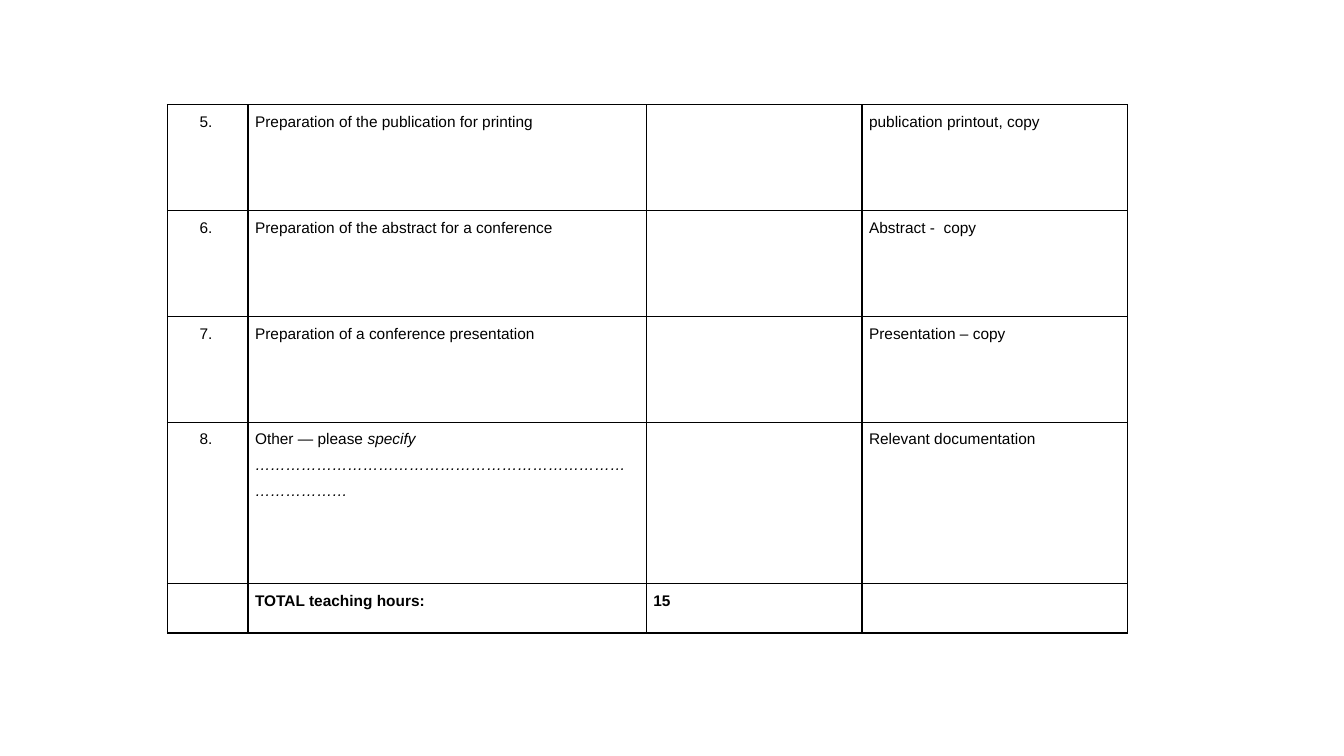
from lxml.etree import SubElement
from pptx import Presentation
from pptx.dml.color import RGBColor
from pptx.oxml.ns import qn
from pptx.util import Inches, Pt


def color(hex_code):
    return RGBColor.from_string(hex_code)


class ReportSlide:
    font = "Arial"
    size = 11
    ink = "000000"
    padding = 0.07

    def __init__(self, deck):
        self.slide = deck.slides.add_slide(deck.slide_layouts[6])

    def table(self, left, top, widths, heights, rows):
        frame = self.slide.shapes.add_table(
            len(heights), len(widths), Inches(left), Inches(top),
            Inches(sum(widths)), Inches(sum(heights)))
        grid = frame.table
        grid.first_row = grid.horz_banding = False
        for column, width in zip(grid.columns, widths):
            column.width = Inches(width)
        for row, height in zip(grid.rows, heights):
            row.height = Inches(height)
        for row, entries in zip(grid.rows, rows):
            for index, (cell, runs) in enumerate(zip(row.cells, entries)):
                self.cell(cell, runs, indent=0.25 if index == 0 else 0)

    def cell(self, cell, runs, indent):
        cell.margin_left = cell.margin_right = Inches(self.padding)
        cell.margin_top = cell.margin_bottom = 0
        self.borders(cell)
        cell.fill.background()
        paragraph = cell.text_frame.paragraphs[0]
        paragraph.font.size = Pt(self.size)
        if not runs:
            return
        paragraph.line_spacing = 1.5
        paragraph.space_before = paragraph.space_after = Pt(6)
        if indent:
            paragraph._p.get_or_add_pPr().set("marL", str(Inches(indent)))
        for text, style in runs:
            self.run(paragraph, text, style)

    def run(self, paragraph, text, style):
        run = paragraph.add_run()
        run.text = text
        run.font.name = self.font
        run.font.size = Pt(self.size)
        run.font.color.rgb = color(self.ink)
        run.font.bold = style == "bold"
        run.font.italic = style == "italic"

    def borders(self, cell):
        properties = cell._tc.get_or_add_tcPr()
        for side in ("a:lnL", "a:lnR", "a:lnT", "a:lnB"):
            line = SubElement(properties, qn(side), w=str(Pt(1)))
            fill = SubElement(line, qn("a:solidFill"))
            SubElement(fill, qn("a:srgbClr"), val=self.ink)


def plain(text):
    return [(text, "plain")]


def main():
    deck = Presentation()
    deck.slide_width, deck.slide_height = Inches(13.33), Inches(7.5)
    report = ReportSlide(deck)

    # Activities and the documents that confirm them
    other = [("Other — please ", "plain"), ("specify " + "…" * 30, "italic")]
    activities = [
        (plain("Preparation of the publication for printing"),
         plain("publication printout, copy")),
        (plain("Preparation of the abstract for a conference"),
         plain("Abstract -  copy")),
        (plain("Preparation of a conference presentation"),
         plain("Presentation – copy")),
        (other, plain("Relevant documentation")),
    ]
    rows = [[plain(f"{number}."), activity, [], proof]
            for number, (activity, proof) in enumerate(activities, 5)]

    # Total
    rows.append([[], [("TOTAL teaching hours:", "bold")], [("15", "bold")], []])

    report.table(1.66, 1.04, widths=[0.8, 3.95, 2.14, 2.63],
                 heights=[1.05, 1.05, 1.05, 1.6, 0.49], rows=rows)
    deck.save("out.pptx")


if __name__ == "__main__":
    main()
